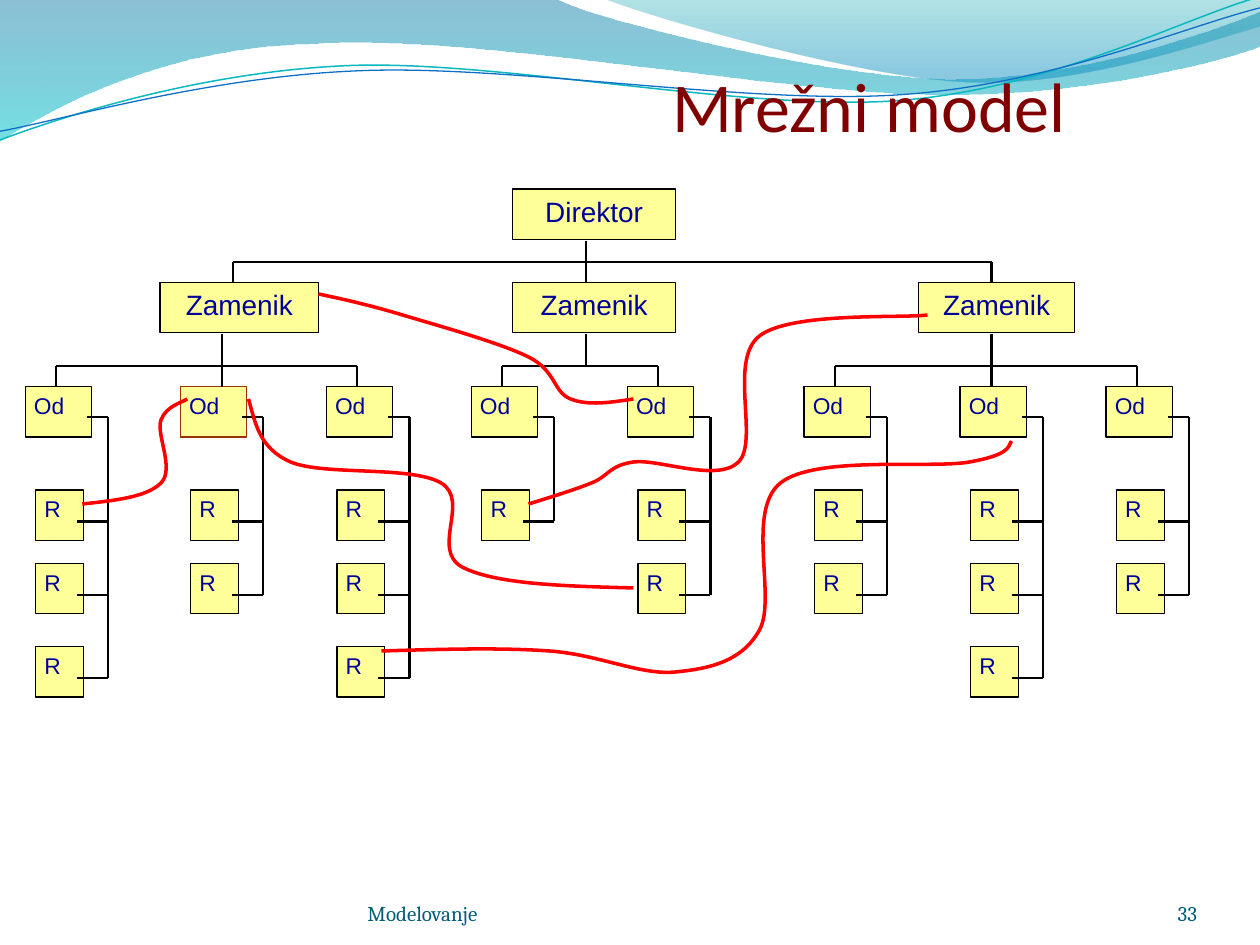
from pptx import Presentation
from pptx.dml.color import RGBColor
from pptx.enum.shapes import MSO_CONNECTOR as Connector, MSO_SHAPE as Shape
from pptx.enum.text import MSO_ANCHOR as Anchor, PP_ALIGN as Align
from pptx.oxml.ns import qn
from pptx.util import Pt
from lxml.etree import Element, SubElement

COLORS = {
    "title": "800000", "footer": "045D75", "label": "000099", "box": "FFFF99",
    "line": "000000", "accent": "993300", "link": "FF0000",
    "teal": "0AB8BF", "blue": "0F6FC6",
}
TITLE = "Mrežni model"
FOOTERS = [("Modelovanje", 210, 264, Align.LEFT), ("33", 624, 60, Align.RIGHT)]

DIRECTOR = ("Direktor", 293, 93)
DEPUTIES = [
    {"box": ("Zamenik", 91.5, 90.5), "top": 133, "stem": 126.7,
     "departments": [(14.4, 3, "line"), (103, 2, "accent"), (186.5, 3, "line")]},
    {"box": ("Zamenik", 293, 93), "top": 334.8, "stem": 334.8,
     "departments": [(269.3, 1, "line"), (358.5, 2, "line")]},
    {"box": ("Zamenik", 525, 89), "top": 566.6, "stem": 566.6,
     "departments": [(459.5, 2, "line"), (548.6, 3, "line"), (632, 2, "line")]},
]
BOX_HEIGHT = 28.8
DIRECTOR_Y, TOP_RAIL_Y, DEPUTY_Y, LOW_RAIL_Y, DEPARTMENT_Y = 108, 149.8, 161.3, 209, 221
WORKER_YS = [280, 322, 369.5]

BANDS = [
    ([(0, 0), (317, -1), (343, 12, 478, 45, 546, 45), (614, 45, 690, 19, 720, 6.5),
      (721, 26), (708, 32, 626, 55, 537, 54), (448, 54, 275, 20, 185, 24.5),
      (93, 26, 33, 60, -1, 81)],
     [(0, "0074A1", 45), (1, "00C6CF", 55)]),
    ([(345, -1), (366, 8, 491, 45, 554, 47), (616, 50, 692, 23, 720, 15), (720, 0)],
     [(0, "00A1A9", 30), (0.8, "008BBF", 45)]),
]
WAVES = [
    ([(0, 80), (34.5, 67, 114, 41, 199, 37.5), (284, 34, 427, 64, 513, 57.5),
      (600, 51, 675, 11, 718.5, -1.5)], "teal", 0.85),
    ([(0, 75), (34, 69, 118, 44, 204, 40.5), (290, 36.5, 430, 60.5, 516, 54),
      (602, 48, 677.5, 15, 720, 4.5)], "blue", 0.75),
]
LINKS = [
    [(47, 288), (66, 286, 84, 284, 92, 276), (100, 268, 89, 248, 92, 240),
     (95, 232, 104, 230, 107, 228)],
    [(142, 228), (146, 242, 148, 256, 166, 264), (185, 272, 235, 266, 252, 276),
     (269, 286, 246, 314, 264, 324), (283, 334, 323, 335, 362, 336)],
    [(362, 228), (349, 230, 336, 232, 326, 228), (316, 224, 318, 212, 302, 204),
     (286, 196, 250, 186, 230, 180), (210, 174, 196, 171, 182, 168)],
    [(302, 288), (315, 284, 328, 280, 338, 276), (348, 272, 348, 266, 362, 264),
     (376, 262, 410, 276, 422, 264), (434, 252, 416, 206, 434, 192),
     (452, 178, 516, 182, 530, 180)],
    [(218, 372), (252, 371, 286, 370, 314, 372), (342, 374, 366, 386, 386, 384),
     (406, 382, 424, 378, 434, 360), (444, 342, 426, 292, 446, 276),
     (466, 260, 532, 268, 554, 264), (576, 260, 576, 256, 578, 252)],
]

deck = Presentation()
deck.slide_width, deck.slide_height = Pt(720), Pt(540)
page = deck.slides.add_slide(deck.slide_layouts[5])


def color(name):
    return RGBColor.from_string(COLORS[name])


def write(shape, text, size, font, name, align, anchor, insets):
    frame = shape.text_frame
    frame.word_wrap = True
    frame.vertical_anchor = anchor
    frame.margin_left, frame.margin_top, frame.margin_right, frame.margin_bottom = map(Pt, insets)
    para = frame.paragraphs[0]
    para.alignment = align
    span = para.add_run()
    span.text = text
    span.font.size, span.font.name = Pt(size), font
    span.font.color.rgb = color(name)


def add_outline(steps, close=False):
    first, *rest = [(Pt(x), Pt(y)) for step in steps for x, y in zip(step[::2], step[1::2])]
    builder = page.shapes.build_freeform(*first, scale=1.0)
    builder.add_line_segments(rest, close=close)
    shape = builder.convert_to_shape()
    shape.shadow.inherit = False
    segments = iter(list(shape.element.iter(qn("a:lnTo"))))
    for step in steps[1:]:
        group = [next(segments) for _ in step[::2]]
        if len(group) == 3:
            curve = Element(qn("a:cubicBezTo"))
            group[0].addprevious(curve)
            for segment in group:
                curve.append(segment[0])
                segment.getparent().remove(segment)
    return shape


def add_curve(steps, name, width):
    shape = add_outline(steps)
    shape.fill.background()
    shape.line.color.rgb = color(name)
    shape.line.width = Pt(width)


def add_band(steps, stops):
    shape = add_outline(steps, close=True)
    shape.line.fill.background()
    shape.fill.gradient()
    shape.fill.gradient_angle = 270
    for stop, (position, value, _) in zip(shape.fill.gradient_stops, stops):
        stop.position = position
        stop.color.rgb = RGBColor.from_string(value)
    nodes = list(shape.element.spPr.iter(qn("a:srgbClr")))
    for node, (_, _, opacity) in zip(nodes, stops):
        SubElement(node, qn("a:alpha")).set("val", str(opacity * 1000))


def add_box(text, x, width, y, size=16, align=Align.CENTER, border="line"):
    box = page.shapes.add_shape(Shape.RECTANGLE, Pt(x), Pt(y), Pt(width), Pt(BOX_HEIGHT))
    box.shadow.inherit = False
    box.fill.solid()
    box.fill.fore_color.rgb = color("box")
    box.line.color.rgb = color(border)
    box.line.width = Pt(0.75)
    write(box, text, size, "Arial", "label", align, Anchor.TOP, (5, 3, 5, 3))


def add_line(x1, y1, x2, y2):
    line = page.shapes.add_connector(Connector.STRAIGHT, Pt(x1), Pt(y1), Pt(x2), Pt(y2))
    line.line.color.rgb = color("line")
    line.line.width = Pt(1.25)
    SubElement(line.element.spPr, qn("a:effectLst"))


for steps, stops in BANDS:
    add_band(steps, stops)
for wave in WAVES:
    add_curve(*wave)

title = page.shapes.title
title.left, title.top, title.width, title.height = Pt(384), Pt(0), Pt(336), Pt(84)
write(title, TITLE, 40, "Calibri", "title", Align.LEFT, Anchor.BOTTOM, (0, 3.6, 0, 0))
title.element.getparent().append(title.element)
for text, x, width, align in FOOTERS:
    footer = page.shapes.add_textbox(Pt(x), Pt(500.4), Pt(width), Pt(28.8))
    write(footer, text, 12, "Cambria", "footer", align, Anchor.BOTTOM, (0, 0, 0, 0))

add_box(*DIRECTOR, DIRECTOR_Y)
for deputy in DEPUTIES:
    add_box(*deputy["box"], DEPUTY_Y)
    for x, workers, border in deputy["departments"]:
        add_box("Od", x, 38, DEPARTMENT_Y, 13, Align.LEFT, border)
        for y in WORKER_YS[:workers]:
            add_box("R", x + 6, 27.4, y, 13, Align.LEFT)

add_line(DEPUTIES[0]["top"], TOP_RAIL_Y, DEPUTIES[-1]["top"], TOP_RAIL_Y)
for deputy in DEPUTIES:
    departments = deputy["departments"]
    is_middle = deputy is DEPUTIES[1]
    add_line(deputy["top"], 137.5 if is_middle else TOP_RAIL_Y, deputy["top"], DEPUTY_Y)
    ends = [departments[0][0] + 17.7, departments[-1][0] + 17.7]
    add_line(ends[0], LOW_RAIL_Y, ends[1], LOW_RAIL_Y)
    for x in ends:
        add_line(x, LOW_RAIL_Y, x, DEPARTMENT_Y)
    stem_end = DEPARTMENT_Y if len(departments) == 3 else LOW_RAIL_Y
    add_line(deputy["stem"], 190.8, deputy["stem"], stem_end)
    for x, workers, _ in departments:
        spine, start = x + 47.5, DEPARTMENT_Y + 17.5
        stubs = [y + 18 for y in WORKER_YS[:workers]]
        add_line(spine, start, spine, stubs[-1])
        add_line(x + 35.5, start, spine, start)
        for y in stubs:
            add_line(x + 29.6, y, spine, y)

for steps in LINKS:
    add_curve(steps, "link", 2)

deck.save("out.pptx")
